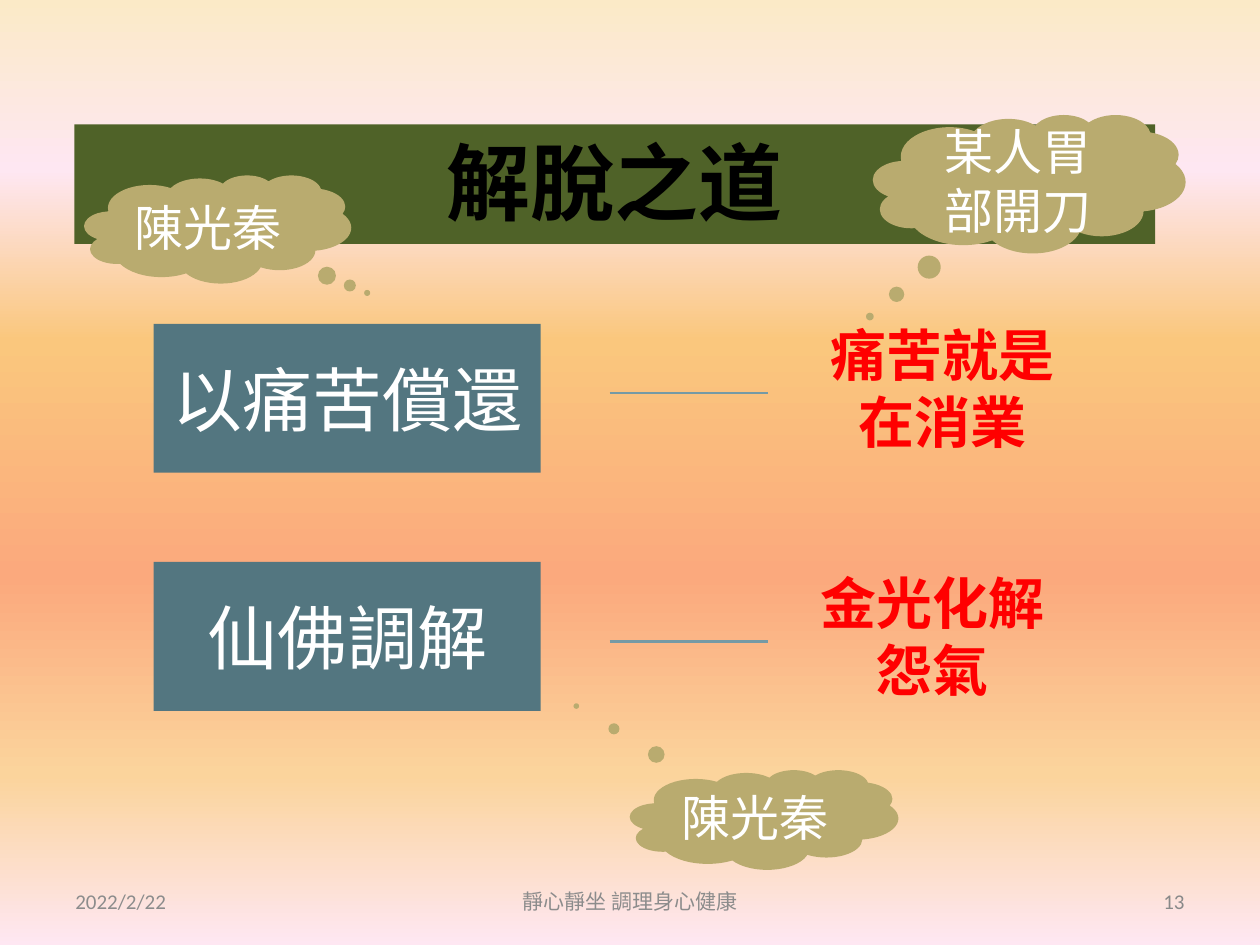
from lxml import etree
from pptx import Presentation
from pptx import util as u
from pptx.dml.color import RGBColor
from pptx.enum import shapes, text
from pptx.oxml import ns

HUES = {
    "title": "4F6228", "cloud": "B9AB6F", "box": "537680", "line": "759AA5",
    "black": "000000", "white": "FFFFFF", "red": "FF0000",
    "gray": "8C8C8C", "page": "898989",
}
STOPS = [(0, "FBEAC7"), (18, "FEE7F2"), (36, "FAC77D"),
         (61, "FBA97D"), (82, "FBD49C"), (100, "FEE7F2")]
SANS = "Calibri"
HAN = "Noto Sans CJK JP"
FORMS = {
    "title": {"name": HAN, "size": u.Pt(48), "bold": True},
    "cloud": {"name": SANS, "size": u.Pt(28)},
    "box": {"name": HAN, "size": u.Pt(40)},
    "note": {"name": HAN, "size": u.Pt(32), "bold": True},
    "foot": {"name": SANS, "size": u.Pt(12)},
}
MID = text.MSO_ANCHOR.MIDDLE
TOP = text.MSO_ANCHOR.TOP
ALIGN = text.PP_ALIGN
KIND = shapes.MSO_SHAPE


def cms(box):
    return [u.Cm(side) for side in box]


def rgb(hue):
    return RGBColor.from_string(HUES[hue])


def write(shape, words, form, hue, anchor=MID, align=ALIGN.CENTER):
    frame = shape.text_frame
    frame.word_wrap = True
    frame.vertical_anchor = anchor
    para = frame.paragraphs[0]
    para.alignment = align
    font = para.add_run().font
    para.runs[0].text = words
    for key, value in FORMS[form].items():
        setattr(font, key, value)
    font.color.rgb = rgb(hue)


def block(slide, kind, box, hue):
    shape = slide.shapes.add_shape(kind, *cms(box))
    shape.shadow.inherit = False
    shape.fill.solid()
    shape.fill.fore_color.rgb = rgb(hue)
    shape.line.fill.background()
    return shape


def label(slide, box, words, form, hue, anchor=MID, align=ALIGN.CENTER):
    shape = slide.shapes.add_textbox(*cms(box))
    write(shape, words, form, hue, anchor, align)


def backdrop(slide):
    fill = slide.background.fill
    fill.gradient()
    grad = slide.background._cSld.find(".//" + ns.qn("a:gradFill"))
    stops = grad.find(ns.qn("a:gsLst"))
    for stop in list(stops):
        stops.remove(stop)
    for place, hue in STOPS:
        stop = etree.SubElement(stops, ns.qn("a:gs"), pos=str(place * 1000))
        etree.SubElement(stop, ns.qn("a:srgbClr"), val=hue)
    line = grad.find(ns.qn("a:lin"))
    line.set("ang", "5400000")
    line.set("scaled", "0")


def header(slide, box):
    shape = block(slide, KIND.RECTANGLE, box, "title")
    write(shape, "解脫之道", "title", "black", TOP)


def cloud(slide, box, words, tail):
    shape = block(slide, KIND.CLOUD_CALLOUT, box, "cloud")
    for spot, value in enumerate(tail):
        shape.adjustments[spot] = value
    write(shape, words, "cloud", "white")


def row(slide, box, words, rule, note, shift):
    left, top, wide, high = box
    shape = block(slide, KIND.RECTANGLE, box, "box")
    write(shape, words, "box", "white")
    start = left + wide + 1.39
    level = top + rule
    line = slide.shapes.add_connector(
        shapes.MSO_CONNECTOR.STRAIGHT,
        *cms((start, level, start + 3.2, level)))
    line.line.color.rgb = rgb("line")
    line.line.width = u.Pt(1.5)
    etree.SubElement(line._element.spPr, ns.qn("a:effectLst"))
    across, down = shift
    label(slide, (left + across, top + down, 5.79, high),
          note, "note", "red", TOP)


def footer(slide, box):
    left, top, wide, high = box
    side, mid = 5.92, 8.05
    parts = [
        (left, side, "2022/2/22", "gray", ALIGN.LEFT),
        (left + (wide - mid) / 2, mid, "靜心靜坐 調理身心健康",
         "gray", ALIGN.CENTER),
        (left + wide - side, side, "13", "page", ALIGN.RIGHT),
    ]
    for start, span, words, hue, align in parts:
        label(slide, (start, top, span, high), words, "foot", hue,
              align=align)


def main():
    deck = Presentation()
    deck.slide_width, deck.slide_height = cms((25.4, 19.05))
    slide = deck.slides.add_slide(deck.slide_layouts[6])
    backdrop(slide)
    footer(slide, (1.27, 17.65, 22.86, 1.02))
    header(slide, (1.5, 2.51, 21.79, 2.41))
    row(slide, (3.1, 6.53, 7.8, 3), "以痛苦償還", 1.39,
        "痛苦就是在消業", (13, -0.2))
    row(slide, (3.1, 11.33, 7.8, 3), "仙佛調解", 1.6,
        "金光化解怨氣", (12.8, 0))
    cloud(slide, (1.7, 3.53, 5.38, 2.18), "陳光秦", (0.56, 0.59))
    cloud(slide, (12.7, 15.52, 5.41, 2.01), "陳光秦", (-0.7, -1.14))
    cloud(slide, (17.6, 2.31, 6.3, 2.79), "某人胃部開刀", (-0.51, 0.96))
    deck.save("out.pptx")


if __name__ == "__main__":
    main()
